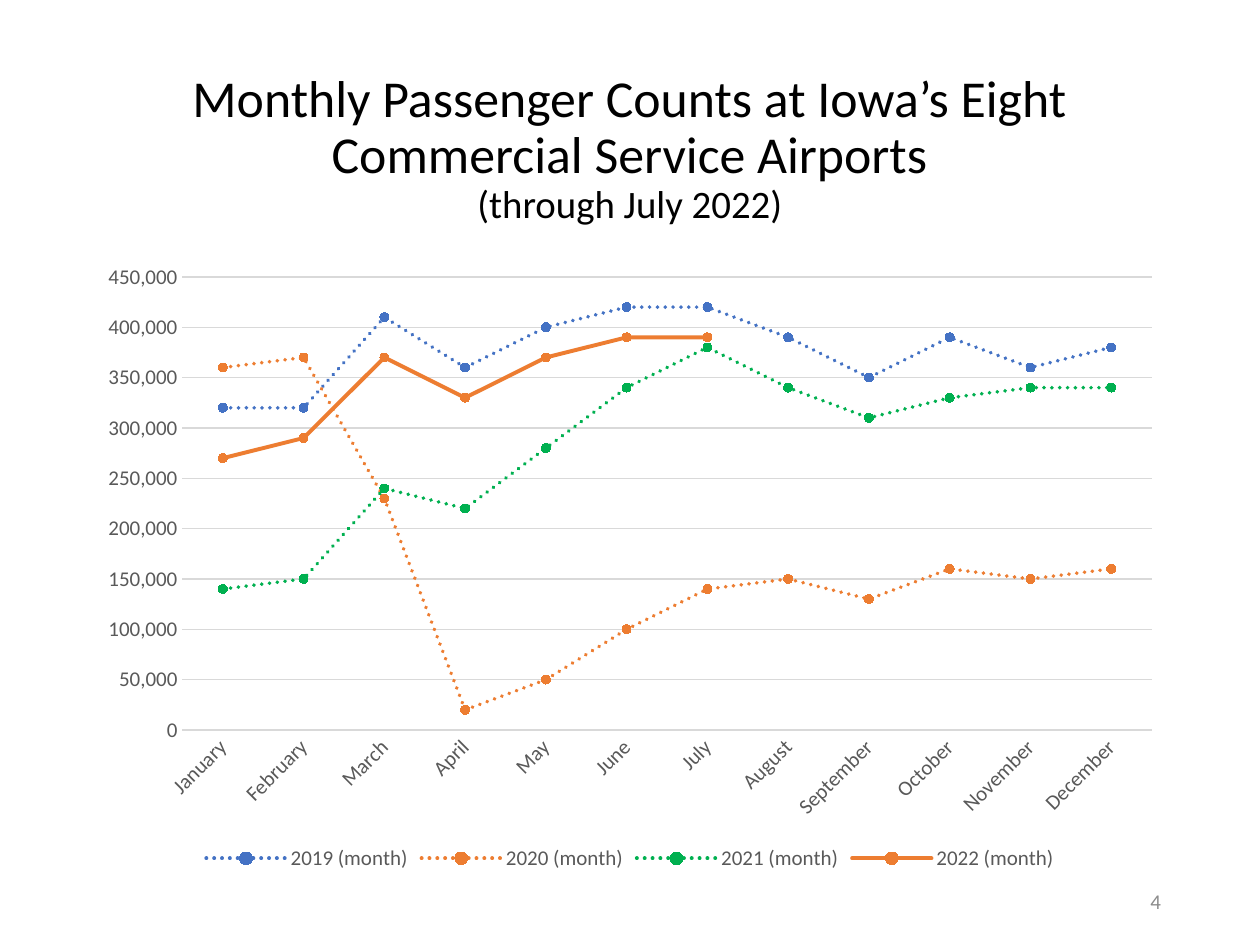
from pptx import Presentation
from pptx.chart.data import CategoryChartData
from pptx.dml.color import RGBColor
from pptx.enum.chart import XL_CHART_TYPE, XL_LEGEND_POSITION, XL_MARKER_STYLE, XL_TICK_MARK
from pptx.enum.dml import MSO_LINE
from pptx.enum.text import MSO_ANCHOR, PP_ALIGN
from pptx.util import Pt

LINE_MARKERS = XL_CHART_TYPE.LINE_MARKERS
LEGEND_BOTTOM = XL_LEGEND_POSITION.BOTTOM
CIRCLE = XL_MARKER_STYLE.CIRCLE
NO_TICK = XL_TICK_MARK.NONE
DOTTED, SOLID = MSO_LINE.ROUND_DOT, MSO_LINE.SOLID
BOTTOM, MIDDLE = MSO_ANCHOR.BOTTOM, MSO_ANCHOR.MIDDLE
CENTER, RIGHT = PP_ALIGN.CENTER, PP_ALIGN.RIGHT

FONT = "Calibri"
BLACK, LABEL_GRAY, GRID_GRAY, NUMBER_GRAY = "000000", "595959", "D9D9D9", "8C8C8C"
LEFT, WIDTH = 49.5, 621

MONTHS = ["January", "February", "March", "April", "May", "June", "July",
          "August", "September", "October", "November", "December"]
# name, colour, dash, passengers in ten thousands
YEARS = [
    ("2019 (month)", "4472C4", DOTTED, [32, 32, 41, 36, 40, 42, 42, 39, 35, 39, 36, 38]),
    ("2020 (month)", "ED7D31", DOTTED, [36, 37, 23, 2, 5, 10, 14, 15, 13, 16, 15, 16]),
    ("2021 (month)", "00B050", DOTTED, [14, 15, 24, 22, 28, 34, 38, 34, 31, 33, 34, 34]),
    ("2022 (month)", "ED7D31", SOLID, [27, 29, 37, 33, 37, 39, 39] + [None] * 5),
]


def rgb(color):
    return RGBColor.from_string(color)


def set_font(font, size, color):
    font.name, font.size = FONT, Pt(size)
    font.color.rgb = rgb(color)


def set_line(line, color, width):
    line.color.rgb = rgb(color)
    line.width = Pt(width)


def add_text(slide, lines, x, y, w, h, color=BLACK, align=CENTER, anchor=MIDDLE, spacing=1.0):
    """Add a text box; lines holds one (text, size) pair per paragraph."""
    tf = slide.shapes.add_textbox(Pt(x), Pt(y), Pt(w), Pt(h)).text_frame
    tf.word_wrap = True
    tf.vertical_anchor = anchor
    for i, (text, size) in enumerate(lines):
        p = tf.add_paragraph() if i else tf.paragraphs[0]
        p.alignment, p.line_spacing = align, spacing
        r = p.add_run()
        r.text = text
        set_font(r.font, size, color)


def style_axes(chart):
    cat, val = chart.category_axis, chart.value_axis
    for axis in (cat, val):
        axis.major_tick_mark = axis.minor_tick_mark = NO_TICK
        set_font(axis.tick_labels.font, 12, LABEL_GRAY)
    set_line(cat.format.line, GRID_GRAY, 0.75)
    # Slant the month names by 45 degrees
    chart.element.xpath("//c:catAx/c:txPr/a:bodyPr")[0].set("rot", "-2700000")
    val.minimum_scale, val.maximum_scale, val.major_unit = 0, 450000, 50000
    val.tick_labels.number_format = "#,##0"
    val.tick_labels.number_format_is_linked = False
    val.format.line.fill.background()
    set_line(val.major_gridlines.format.line, GRID_GRAY, 0.75)


def style_series(series, color, dash):
    series.smooth = False
    set_line(series.format.line, color, 2.25)
    series.format.line.dash_style = dash
    marker = series.marker
    marker.style, marker.size = CIRCLE, 5
    marker.format.fill.solid()
    marker.format.fill.fore_color.rgb = rgb(color)
    set_line(marker.format.line, color, 0.75)


def round_line_caps(chart):
    for ln in chart.element.xpath("//c:ser/c:spPr/a:ln"):
        ln.set("cap", "rnd")


def add_passenger_chart(slide, x, y, w, h):
    data = CategoryChartData(number_format="#,##0")
    data.categories = MONTHS
    for name, _, _, counts in YEARS:
        data.add_series(name, [None if v is None else v * 10000 for v in counts])
    chart = slide.shapes.add_chart(LINE_MARKERS, Pt(x), Pt(y), Pt(w), Pt(h), data).chart
    set_font(chart.font, 10, BLACK)
    chart.has_title = False
    chart.has_legend = True
    chart.legend.position = LEGEND_BOTTOM
    chart.legend.include_in_layout = False
    set_font(chart.legend.font, 12, LABEL_GRAY)
    plot = chart.plots[0]
    plot.vary_by_categories = False
    style_axes(chart)
    for series, (_, color, dash, _) in zip(plot.series, YEARS):
        style_series(series, color, dash)
    round_line_caps(chart)


def main():
    prs = Presentation()
    prs.slide_width, prs.slide_height = Pt(720), Pt(540)
    s = prs.slides.add_slide(prs.slide_layouts[6])
    add_passenger_chart(s, LEFT, 144, WIDTH, 356.5)
    add_text(s, [("4", 12)], 508.5, 500.5, 162, 28.75, color=NUMBER_GRAY, align=RIGHT)
    title = [("Monthly Passenger Counts at Iowa’s Eight Commercial Service Airports", 29.6),
             ("(through July 2022)", 22.2)]
    add_text(s, title, LEFT, 28.75, WIDTH, 104.5, anchor=BOTTOM, spacing=0.9)
    prs.save("out.pptx")


if __name__ == "__main__":
    main()
